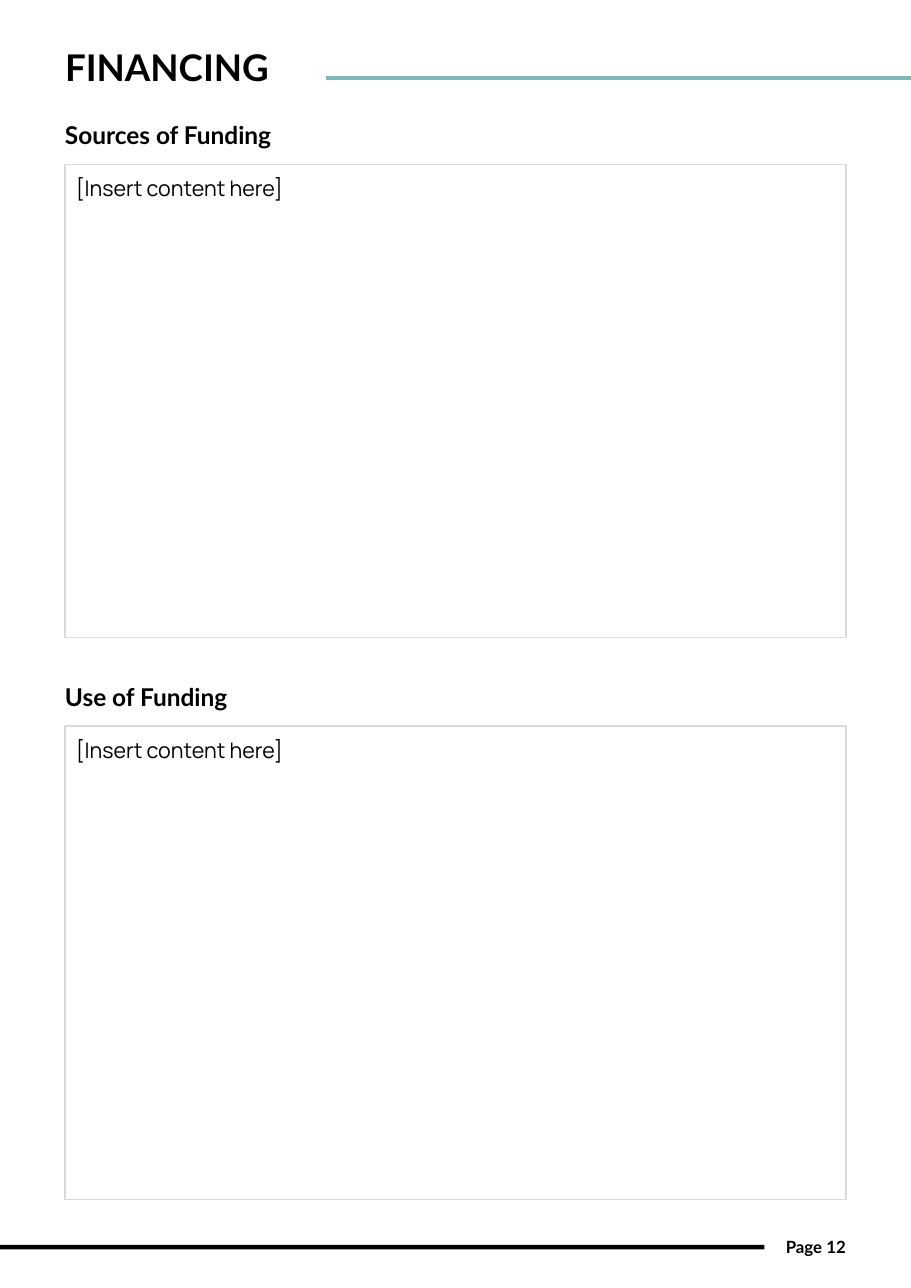
from dataclasses import dataclass

from lxml import etree
from pptx import Presentation
from pptx.dml.color import RGBColor
from pptx.enum.shapes import MSO_CONNECTOR, MSO_SHAPE
from pptx.enum.text import MSO_ANCHOR, MSO_AUTO_SIZE, PP_ALIGN
from pptx.oxml.ns import qn
from pptx.slide import Slide
from pptx.text.text import TextFrame
from pptx.util import Inches, Pt

STRAIGHT = MSO_CONNECTOR.STRAIGHT
RECTANGLE = MSO_SHAPE.RECTANGLE
TOP = MSO_ANCHOR.TOP
NO_AUTOFIT = MSO_AUTO_SIZE.NONE
LEFT, RIGHT = PP_ALIGN.LEFT, PP_ALIGN.RIGHT

BLACK = RGBColor(0x00, 0x00, 0x00)
TEAL = RGBColor(0x81, 0xB8, 0xBA)
LIGHT_GREY = RGBColor(0xD9, 0xD9, 0xD9)

HEADING_FONT, CONTENT_FONT = "Lato", "Manrope"
PAGE_WIDTH, PAGE_HEIGHT = 8.27, 11.69
MARGIN = 0.59
CONTENT_WIDTH = PAGE_WIDTH - 2 * MARGIN
TITLE_ONLY_LAYOUT = 5


@dataclass(frozen=True)
class Section:
    heading: str
    content: str
    top: float


SECTIONS = [
    Section("Sources of Funding", "[Insert content here]", 1.09),
    Section("Use of Funding", "[Insert content here]", 6.19),
]


def write(frame: TextFrame, text: str, font: str, size: float, bold: bool = True,
          align: PP_ALIGN = LEFT, inset: float = 0) -> None:
    """Fill a text frame with one formatted line, anchored at the top."""
    frame.word_wrap = True
    frame.auto_size = NO_AUTOFIT
    frame.vertical_anchor = TOP
    frame.margin_left = frame.margin_right = Inches(inset)
    frame.margin_top = frame.margin_bottom = Inches(inset)
    frame.text = text
    line = frame.paragraphs[0]
    line.alignment = align
    style = line.runs[0].font
    style.name, style.size, style.bold = font, Pt(size), bold
    style.color.rgb = BLACK


def add_title(slide: Slide, text: str) -> None:
    title = slide.shapes.title
    title.left, title.top = Inches(MARGIN), Inches(0.41)
    title.width, title.height = Inches(2.34), Inches(0.4)
    write(title.text_frame, text, HEADING_FONT, 24)

    rule = slide.shapes.add_connector(
        STRAIGHT, Inches(2.96), Inches(0.71), Inches(PAGE_WIDTH), Inches(0.71))
    rule.line.color.rgb = TEAL
    rule.line.width = Pt(2.25)
    etree.SubElement(rule._element.spPr, qn("a:effectLst"))


def add_section(slide: Slide, section: Section) -> None:
    heading = slide.shapes.add_textbox(
        Inches(MARGIN), Inches(section.top), Inches(4.83), Inches(0.27))
    write(heading.text_frame, section.heading, HEADING_FONT, 16)

    content = slide.shapes.add_shape(
        RECTANGLE, Inches(MARGIN), Inches(section.top + 0.4),
        Inches(CONTENT_WIDTH), Inches(4.3))
    content.shadow.inherit = False
    content.fill.background()
    content.line.color.rgb = LIGHT_GREY
    content.line.width = Pt(0.75)
    write(content.text_frame, section.content, CONTENT_FONT, 14, bold=False, inset=0.1)


def add_footer(slide: Slide, text: str) -> None:
    bar = slide.shapes.add_shape(
        RECTANGLE, Inches(0), Inches(11.3), Inches(6.94), Inches(0.04))
    bar.shadow.inherit = False
    bar.fill.solid()
    bar.fill.fore_color.rgb = BLACK
    bar.line.fill.background()

    page_number = slide.shapes.add_textbox(
        Inches(6.94), Inches(11.22), Inches(0.74), Inches(0.19))
    write(page_number.text_frame, text, HEADING_FONT, 11, align=RIGHT)


def main() -> None:
    presentation = Presentation()
    presentation.slide_width = Inches(PAGE_WIDTH)
    presentation.slide_height = Inches(PAGE_HEIGHT)
    slide = presentation.slides.add_slide(presentation.slide_layouts[TITLE_ONLY_LAYOUT])

    add_title(slide, "FINANCING")
    for section in SECTIONS:
        add_section(slide, section)
    add_footer(slide, "Page 12")

    presentation.save("out.pptx")


if __name__ == "__main__":
    main()
